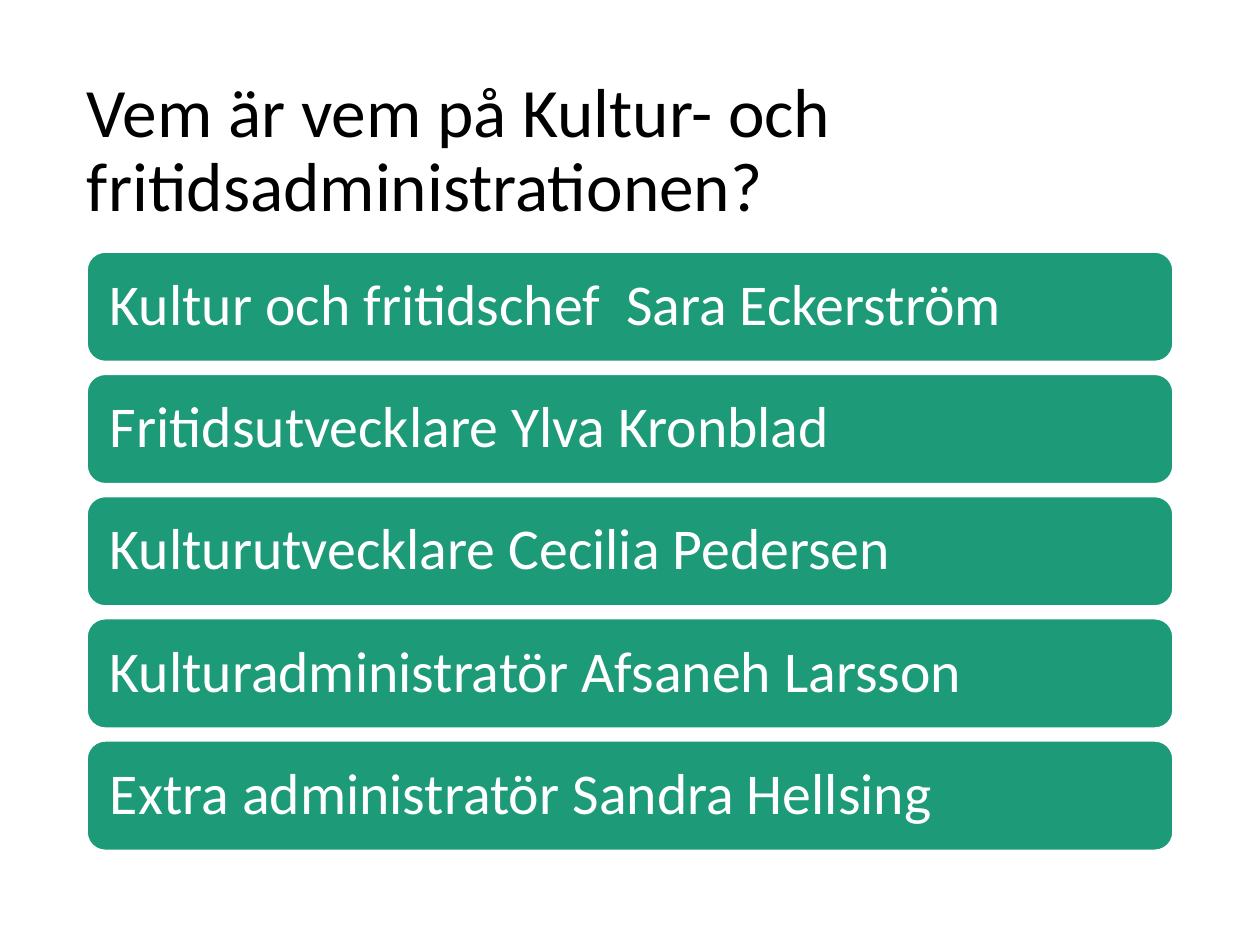
import pptx
import pptx.dml.color
import pptx.enum.shapes
import pptx.enum.text
import pptx.util


def color(hex_text):
    return pptx.dml.color.RGBColor.from_string(hex_text)


class StaffSlide:
    """Holds the style, the row grid and the current slide."""

    FONT = "Calibri"
    GREEN, WHITE, BLACK = "1D9A78", "FFFFFF", "000000"
    LEFT, WIDTH = 0.69, 8.62
    FIRST_ROW, ROW_PITCH, ROW_HEIGHT = 2, 0.97, 0.87

    def __init__(self, deck):
        self.slide = deck.slides.add_slide(deck.slide_layouts[5])
        self.slide.background.fill.solid()
        self.slide.background.fill.fore_color.rgb = color(self.WHITE)

    def set_text(self, shape, text, size, hex_text, anchor):
        frame = shape.text_frame
        frame.text = text
        frame.word_wrap = True
        frame.auto_size = pptx.enum.text.MSO_AUTO_SIZE.NONE
        frame.vertical_anchor = anchor
        para = frame.paragraphs[0]
        para.alignment = pptx.enum.text.PP_ALIGN.LEFT
        para.line_spacing = 0.9
        for span in para.runs:
            span.font.name = self.FONT
            span.font.size = pptx.util.Pt(size)
            span.font.color.rgb = color(hex_text)

    def title(self, text):
        box = self.slide.shapes.title
        box.left, box.top = pptx.util.Inches(0.59), pptx.util.Inches(0.55)
        box.width, box.height = pptx.util.Inches(8.72), pptx.util.Inches(1.3)
        self.set_text(box, text, 39.6, self.BLACK, pptx.enum.text.MSO_ANCHOR.BOTTOM)

    def bar(self, row, text):
        box = self.slide.shapes.add_shape(
            pptx.enum.shapes.MSO_SHAPE.ROUNDED_RECTANGLE,
            pptx.util.Inches(self.LEFT),
            pptx.util.Inches(self.FIRST_ROW + row * self.ROW_PITCH),
            pptx.util.Inches(self.WIDTH),
            pptx.util.Inches(self.ROW_HEIGHT),
        )
        box.shadow.inherit = False
        box.fill.solid()
        box.fill.fore_color.rgb = color(self.GREEN)
        box.line.color.rgb = color(self.WHITE)
        box.line.width = pptx.util.Pt(1)
        frame = box.text_frame
        inset = pptx.util.Inches(0.14)
        frame.margin_left = frame.margin_right = inset
        frame.margin_top = frame.margin_bottom = inset
        self.set_text(box, text, 33, self.WHITE, pptx.enum.text.MSO_ANCHOR.MIDDLE)


def main():
    deck = pptx.Presentation()
    deck.slide_width = pptx.util.Inches(10)
    deck.slide_height = pptx.util.Inches(7.5)
    page = StaffSlide(deck)
    page.title("Vem är vem på Kultur- och fritidsadministrationen?")
    staff = [
        "Kultur och fritidschef  Sara Eckerström",
        "Fritidsutvecklare Ylva Kronblad",
        "Kulturutvecklare Cecilia Pedersen",
        "Kulturadministratör Afsaneh Larsson",
        "Extra administratör Sandra Hellsing",
    ]
    for row, person in enumerate(staff):
        page.bar(row, person)
    deck.save("out.pptx")


if __name__ == "__main__":
    main()
